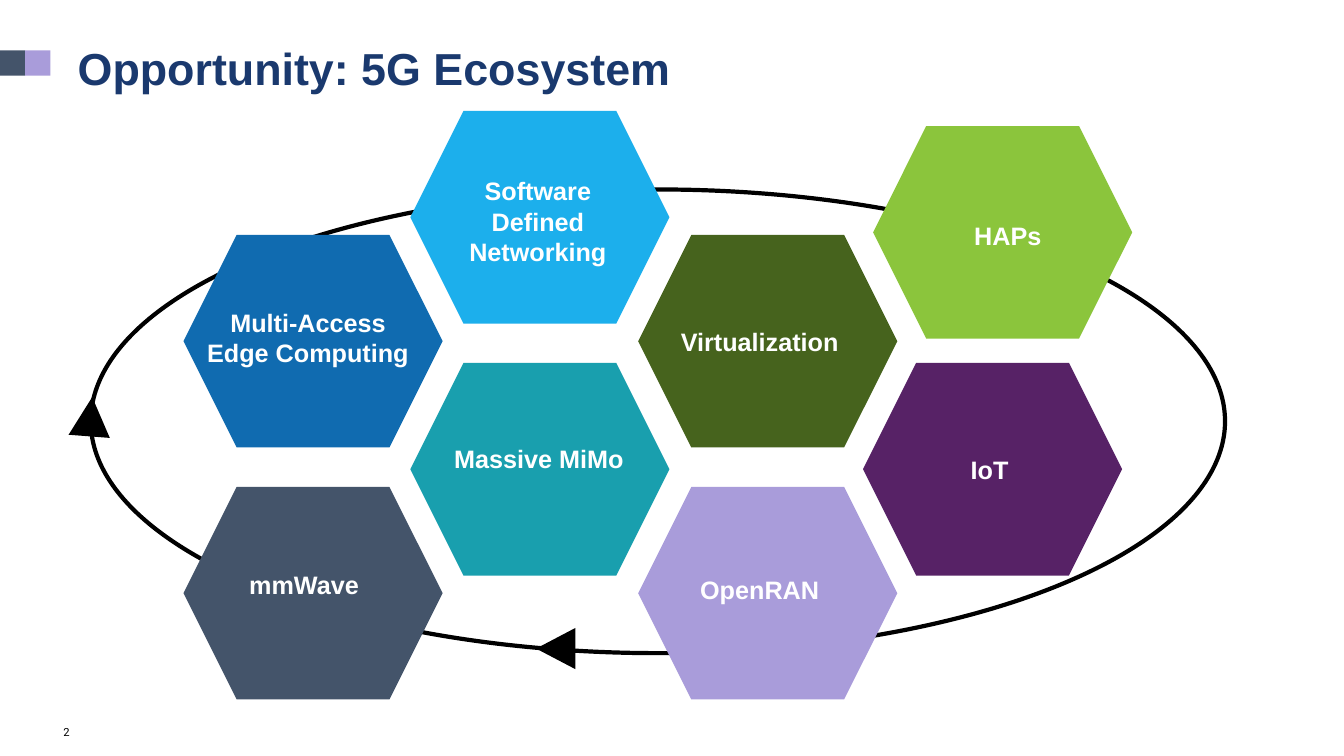
from collections import namedtuple

from pptx import Presentation
from pptx.dml.color import RGBColor
from pptx.enum.shapes import MSO_SHAPE
from pptx.enum.text import MSO_ANCHOR, PP_ALIGN
from pptx.util import Inches, Pt

Box = namedtuple("Box", "left top width height")
Topic = namedtuple("Topic", "label column row color shift_x shift_y width lines")

SLIDE_WIDTH, SLIDE_HEIGHT = 13.33, 7.5
COLUMNS = (1.82, 4.07, 6.33, 8.56)
ROWS = (1.1, 2.33, 3.6, 4.83)
HEXAGON_WIDTH, HEXAGON_HEIGHT = 2.57, 2.11
LABEL_WIDTH, LINE_HEIGHT, LABEL_PADDING = 2.11, 0.3, 0.1
WHITE, BLACK, NAVY, SLATE, LILAC = "FFFFFF", "000000", "1A396E", "44546A", "A99CDA"

TOPICS = (
    Topic("mmWave", 0, 3, SLATE, -0.09, -0.09, LABEL_WIDTH, 1),
    Topic("Massive MiMo", 1, 2, "199FAE", -0.01, -0.11, LABEL_WIDTH, 1),
    Topic("Software Defined Networking", 1, 0, "1CAFEC", -0.02, 0.04, LABEL_WIDTH, 3),
    Topic("OpenRAN", 2, 3, LILAC, -0.08, -0.04, LABEL_WIDTH, 1),
    Topic("Virtualization", 2, 1, "46631D", -0.08, 0, LABEL_WIDTH, 1),
    Topic("IoT", 3, 2, "572266", -0.03, 0, LABEL_WIDTH, 1),
    Topic("Multi-Access Edge Computing", 0, 1, "106BB0", -0.05, -0.04, 2.22, 2),
    Topic("HAPs", 3, 0, "8BC53C", 0.05, 0.03, LABEL_WIDTH, 1),
)
HAPS_OFFSET = (0.1, 0.15)


def rgb(color):
    """Turn a hex string into a colour."""
    return RGBColor.from_string(color)


def inches(box):
    """Convert a box to slide lengths."""
    return [Inches(length) for length in box]


def add_filled_shape(slide, kind, box, color, rotation=0):
    """Add a flat preset shape without outline."""
    shape = slide.shapes.add_shape(kind, *inches(box))
    shape.shadow.inherit = False
    shape.fill.solid()
    shape.fill.fore_color.rgb = rgb(color)
    shape.line.fill.background()
    shape.rotation = rotation
    return shape


def write(frame, text, size, color, align, font="Arial", bold=True):
    """Write one formatted run into a text frame."""
    frame.word_wrap = True
    para = frame.paragraphs[0]
    para.alignment = align
    span = para.add_run()
    span.text = text
    span.font.size = Pt(size)
    span.font.name = font
    span.font.bold = bold
    span.font.color.rgb = rgb(color)


def add_header(slide, box):
    """Place the title and the two accent squares at the slide edge."""
    title = slide.shapes.title
    title.left, title.top, title.width, title.height = inches(box)
    title.text_frame.vertical_anchor = MSO_ANCHOR.MIDDLE
    write(title.text_frame, "Opportunity: 5G Ecosystem", 32, NAVY, PP_ALIGN.LEFT)
    side = 0.25
    for index, color in enumerate((SLATE, LILAC)):
        square = Box(index * side, 0.5, side, side)
        add_filled_shape(slide, MSO_SHAPE.RECTANGLE, square, color)


def add_orbit(slide, box):
    """Draw the ring with its direction markers."""
    ring = add_filled_shape(slide, MSO_SHAPE.OVAL, box, WHITE)
    ring.line.color.rgb = rgb(BLACK)
    ring.line.width = Pt(3)
    for x_share, y_share, rotation in ((0.41, 0.99, 270), (0.0, 0.49, 4.4)):
        width, height = 0.41, 0.39
        marker = Box(box.left + x_share * box.width - width / 2,
                     box.top + y_share * box.height - height / 2, width, height)
        add_filled_shape(slide, MSO_SHAPE.ISOSCELES_TRIANGLE, marker, BLACK, rotation)


def add_topic(slide, topic, box):
    """Draw a hexagon and its label around the hexagon's centre."""
    add_filled_shape(slide, MSO_SHAPE.HEXAGON, box, topic.color)
    height = topic.lines * LINE_HEIGHT + LABEL_PADDING
    label_box = Box(box.left + (box.width - topic.width) / 2 + topic.shift_x,
                    box.top + (box.height - height) / 2 + topic.shift_y,
                    topic.width, height)
    label = slide.shapes.add_textbox(*inches(label_box))
    write(label.text_frame, topic.label, 18, WHITE, PP_ALIGN.CENTER)


def add_honeycomb(slide):
    """Place every topic on the grid, with the last one set apart."""
    for topic in TOPICS:
        shift_x, shift_y = HAPS_OFFSET if topic.label == "HAPs" else (0, 0)
        box = Box(COLUMNS[topic.column] + shift_x, ROWS[topic.row] + shift_y,
                  HEXAGON_WIDTH, HEXAGON_HEIGHT)
        add_topic(slide, topic, box)


def add_page_number(slide, box):
    """Place the page number in the lower left corner."""
    number = slide.shapes.add_textbox(*inches(box))
    write(number.text_frame, "2", 8, BLACK, PP_ALIGN.RIGHT, "Roboto", False)


def main():
    """Build and save the deck."""
    deck = Presentation()
    deck.slide_width, deck.slide_height = Inches(SLIDE_WIDTH), Inches(SLIDE_HEIGHT)
    slide = deck.slides.add_slide(deck.slide_layouts[5])
    add_orbit(slide, Box(0.9, 1.88, 11.25, 4.6))
    add_header(slide, Box(0.67, 0.36, 9.08, 0.62))
    add_honeycomb(slide)
    add_page_number(slide, Box(0, 7.15, 0.79, 0.24))
    deck.save("out.pptx")


if __name__ == "__main__":
    main()
